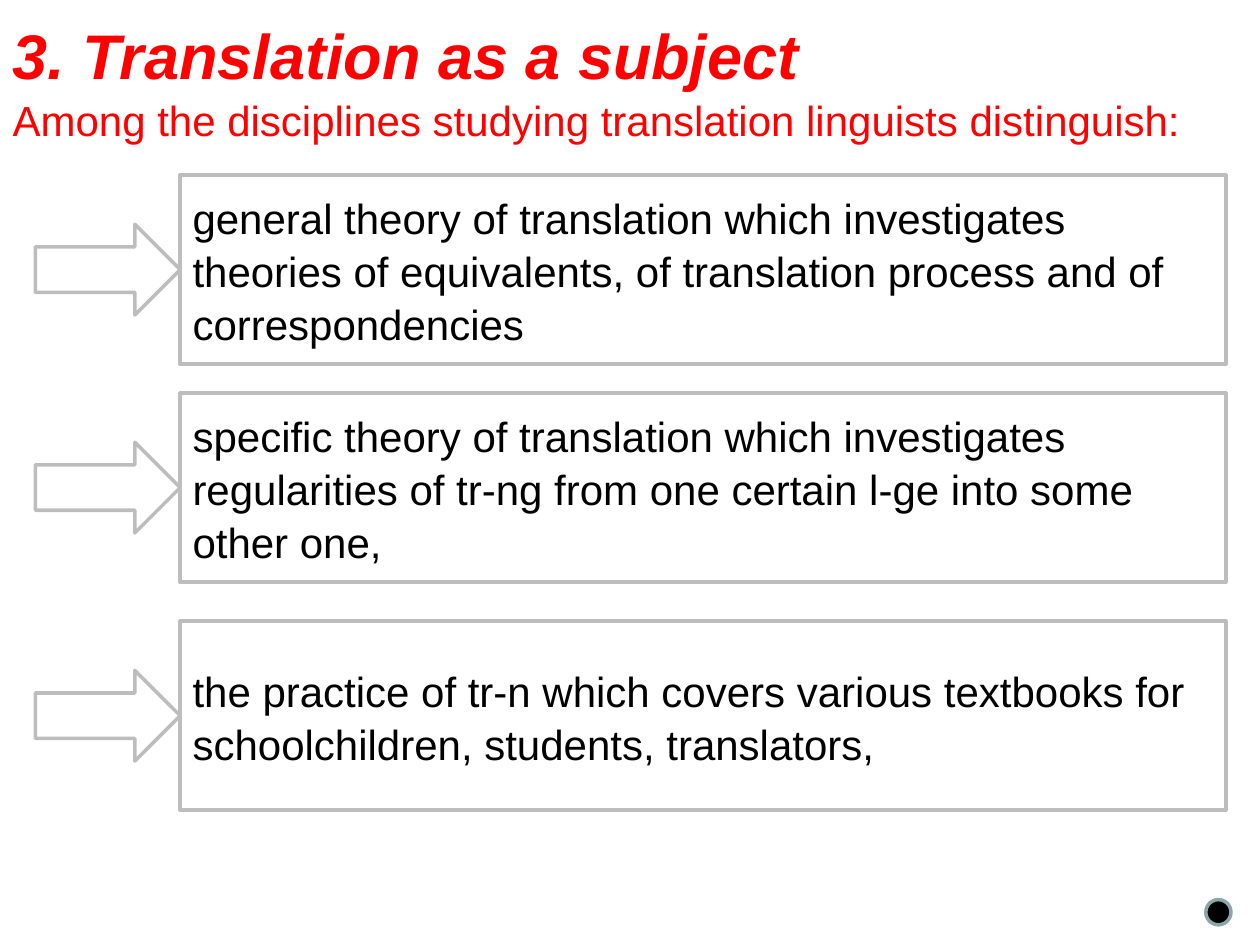
from pptx import Presentation
from pptx.dml.color import RGBColor
from pptx.enum.shapes import MSO_SHAPE as Shape
from pptx.enum.text import MSO_ANCHOR as Anchor, MSO_AUTO_SIZE as AutoSize, PP_ALIGN as Align
from pptx.util import Inches, Pt


def paint(shape, fill, line):
    shape.fill.solid()
    shape.fill.fore_color.rgb = RGBColor.from_string(fill)
    shape.line.color.rgb = RGBColor.from_string(line)
    shape.line.width = Pt(2)
    shape.shadow.inherit = False


def format_para(para, size, color, align, emphasis=False):
    para.alignment = align
    para.line_spacing = 1.05
    para.space_before = Pt(0)
    for span in para.runs:
        span.font.name = "Arial"
        span.font.size = Pt(size)
        span.font.bold = emphasis
        span.font.italic = emphasis
        span.font.color.rgb = RGBColor.from_string(color)


deck = Presentation()
deck.slide_width, deck.slide_height = Inches(10), Inches(7.5)
slide = deck.slides.add_slide(deck.slide_layouts[5])

title = slide.shapes.title
title.left, title.top = Inches(0), Inches(0)
title.width, title.height = Inches(10), Inches(1.15)
paint(title, "FFFFFF", "FFFFFF")
frame = title.text_frame
frame.text = (
    "3. Translation as a subject\n"
    "Among the disciplines studying translation linguists distinguish:"
)
frame.auto_size = AutoSize.NONE
frame.word_wrap = True
frame.vertical_anchor = Anchor.TOP
frame.margin_top = Inches(0.1)
heading, intro = frame.paragraphs
format_para(heading, 36, "FF0000", Align.LEFT, emphasis=True)
format_para(intro, 24, "FF0000", Align.JUSTIFY)

disciplines = [
    (1.39, "general theory of translation which investigates theories of equivalents, "
           "of translation process and of correspondencies"),
    (3.12, "specific theory of translation which investigates regularities of tr-ng "
           "from one certain l-ge into some other one,"),
    (4.93, "the practice of tr-n which covers various textbooks for schoolchildren, "
           "students, translators,"),
]
box_left, box_height = 1.43, 1.5
arrow_width, arrow_height = 1.15, 0.72

for top, text in disciplines:
    group = slide.shapes.add_group_shape()
    box = group.shapes.add_shape(
        Shape.RECTANGLE, Inches(box_left), Inches(top), Inches(8.3), Inches(box_height))
    paint(box, "FFFFFF", "BDBDBD")
    box.text_frame.text = text
    box.text_frame.word_wrap = True
    box.text_frame.vertical_anchor = Anchor.MIDDLE
    format_para(box.text_frame.paragraphs[0], 24, "000000", Align.LEFT)

    arrow = group.shapes.add_shape(
        Shape.RIGHT_ARROW,
        Inches(box_left - arrow_width), Inches(top + (box_height - arrow_height) / 2),
        Inches(arrow_width), Inches(arrow_height))
    paint(arrow, "FFFFFF", "BDBDBD")

dot = slide.shapes.add_shape(
    Shape.OVAL, Inches(9.57), Inches(7.14), Inches(0.2), Inches(0.2))
paint(dot, "000000", "8AA6A8")

deck.save("out.pptx")
